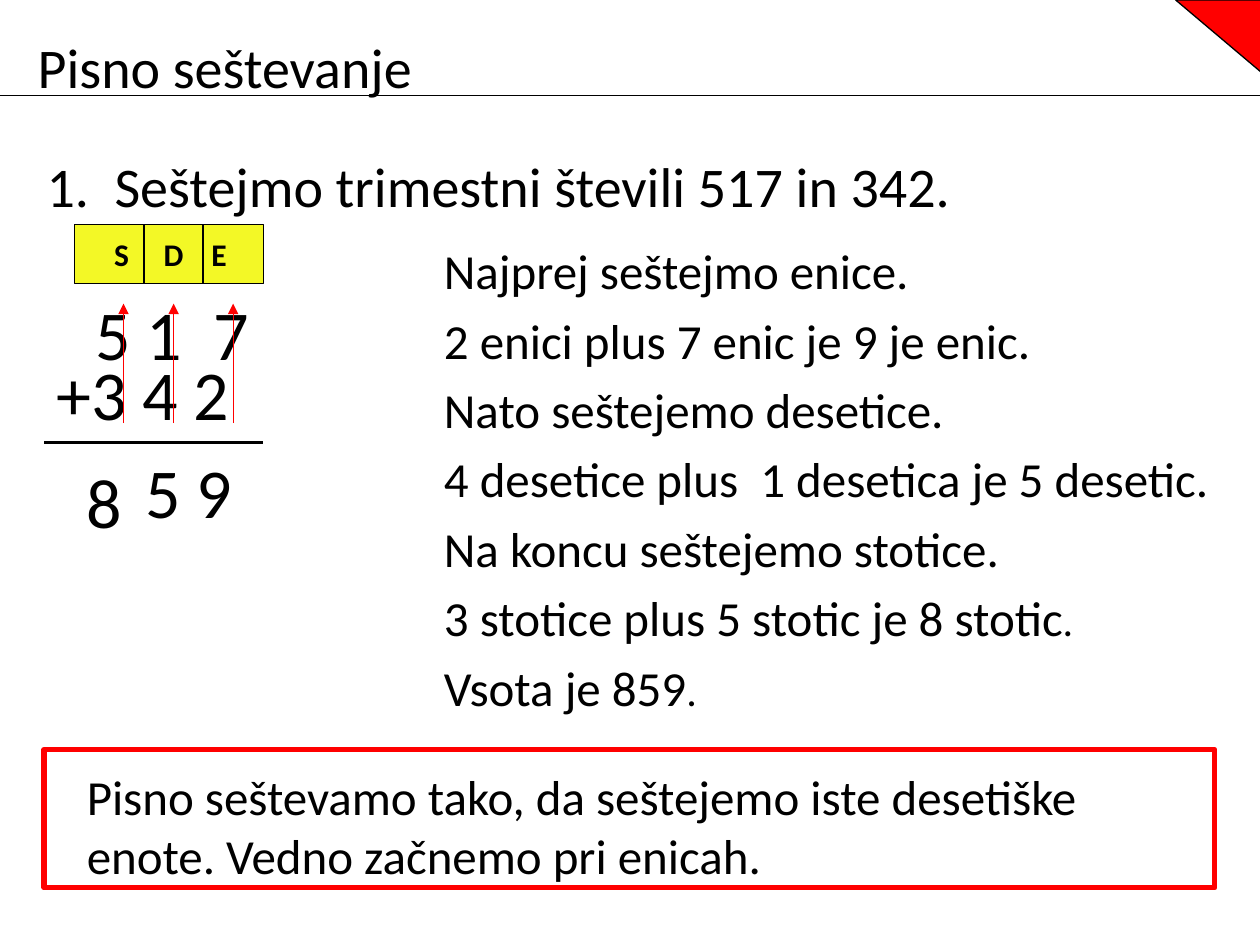
from dataclasses import dataclass

from lxml.etree import SubElement
from pptx import Presentation
from pptx.dml.color import RGBColor
from pptx.enum.shapes import MSO_CONNECTOR as Connector, MSO_SHAPE as Preset
from pptx.enum.text import MSO_ANCHOR as Anchor, PP_ALIGN as Align
from pptx.oxml.ns import qn
from pptx.util import Cm, Pt


@dataclass(frozen=True)
class Theme:
    font: str = "Calibri"
    black: str = "000000"
    red: str = "FF0000"
    yellow: str = "F3F826"
    heading: int = 32
    body: int = 28
    full_stop: int = 24
    digit: int = 40
    label: int = 18
    thin: float = 0.75
    medium: float = 2.25
    thick: float = 3


class SlideBuilder:
    def __init__(self, slide, theme):
        self.slide = slide
        self.theme = theme

    def fill_text(self, shape, runs, inset=0.25, tabs=(), bold=False, wrap=True,
                  anchor=Anchor.TOP):
        """Fill a shape with one paragraph of (text, size) runs."""
        frame = shape.text_frame
        frame_format = {
            "word_wrap": wrap, "vertical_anchor": anchor,
            "margin_left": Cm(inset), "margin_right": Cm(0.25),
            "margin_top": Cm(0.13), "margin_bottom": Cm(0.13),
        }
        for name, value in frame_format.items():
            setattr(frame, name, value)

        paragraph = frame.paragraphs[0]
        paragraph.alignment = Align.LEFT
        if tabs:
            properties = paragraph._p.get_or_add_pPr()
            tab_list = SubElement(properties, qn("a:tabLst"))
            for position in tabs:
                SubElement(tab_list, qn("a:tab"), pos=str(int(Cm(position))), algn="l")

        for text, size in runs:
            run = paragraph.add_run()
            run.text = text
            font_format = {"name": self.theme.font, "size": Pt(size), "bold": bold}
            for name, value in font_format.items():
                setattr(run.font, name, value)
            run.font.color.rgb = RGBColor.from_string(self.theme.black)

    def text(self, left, top, width, height, *runs, **style):
        box = self.slide.shapes.add_textbox(Cm(left), Cm(top), Cm(width), Cm(height))
        self.fill_text(box, runs, **style)

    def shape(self, preset, left, top, width, height, line, weight, fill=None, rotation=0):
        shape = self.slide.shapes.add_shape(
            preset, Cm(left), Cm(top), Cm(width), Cm(height))
        shape.shadow.inherit = False
        shape.rotation = rotation
        if fill:
            shape.fill.solid()
            shape.fill.fore_color.rgb = RGBColor.from_string(fill)
        else:
            shape.fill.background()
        shape.line.color.rgb = RGBColor.from_string(line)
        shape.line.width = Pt(weight)
        return shape

    def line(self, x1, y1, x2, y2, color, weight, arrow=False):
        connector = self.slide.shapes.add_connector(
            Connector.STRAIGHT, Cm(x1), Cm(y1), Cm(x2), Cm(y2))
        connector.line.color.rgb = RGBColor.from_string(color)
        connector.line.width = Pt(weight)
        properties = connector._element.spPr
        if arrow:
            SubElement(properties.find(qn("a:ln")), qn("a:tailEnd"), type="triangle")
        SubElement(properties, qn("a:effectLst"))


def main():
    theme = Theme()
    presentation = Presentation()
    presentation.slide_width, presentation.slide_height = Cm(25.4), Cm(19.05)
    slide = presentation.slides.add_slide(presentation.slide_layouts[6])
    builder = SlideBuilder(slide, theme)

    # Title and task
    builder.text(0.51, 0.53, 17.78, 2, ("Pisno seštevanje", theme.heading))
    builder.text(0.69, 2.92, 24.2, 1.4,
                 ("1.\tSeštejmo trimestni števili 517 in 342.", theme.heading),
                 tabs=[1.37])

    # Written addition
    builder.text(1.09, 5.72, 5.59, 1.8, ("5 1\t7", theme.digit), inset=0.83, tabs=[2.38])
    builder.text(0.89, 6.93, 4.8, 1.4, ("+3 4 2", theme.digit))
    builder.line(0.89, 8.92, 5.31, 8.92, theme.black, theme.medium)
    for digit, left, top in [("5", 2.69, 8.92), ("9", 3.71, 8.92), ("8", 1.5, 9.12)]:
        builder.text(left, top, 1.6, 1.9, (digit, theme.digit))
    for x in (4.7, 3.5, 2.49):
        builder.line(x, 8.53, x, 6.12, theme.red, theme.thin, arrow=True)

    # Explanation, one step a row
    stop = (".", theme.full_stop)
    steps = [
        [("Najprej seštejmo enice.", theme.body)],
        [("2 enici plus 7 enic je 9 je enic.", theme.body)],
        [("Nato seštejemo desetice.", theme.body)],
        [("4 desetice plus  1 desetica je 5 desetic.", theme.body)],
        [("Na koncu seštejemo stotice.", theme.body)],
        [("3 stotice plus 5 stotic je 8 stotic", theme.body), stop],
        [("Vsota je 859", theme.body), stop],
    ]
    for row, runs in enumerate(steps):
        builder.text(8.7, 4.72 + 1.4 * row, 16.7, 1.4, *runs)

    # Corner and line under the title
    builder.shape(Preset.RIGHT_TRIANGLE, 23.7, 0, 1.8, 1.52, theme.black, theme.thin,
                  fill=theme.red, rotation=180)
    builder.line(0, 1.93, 25.4, 1.93, theme.black, theme.thin)

    # Framed rule
    builder.text(1.5, 15.32, 22.81, 2.62,
                 ("Pisno seštevamo tako, da seštejemo iste desetiške enote. "
                  "Vedno začnemo pri enicah.", theme.body))
    builder.shape(Preset.RECTANGLE, 0.89, 15.11, 23.6, 2.79, theme.red, theme.thick)

    # Place-value header
    header = builder.shape(Preset.RECTANGLE, 1.5, 4.52, 3.81, 1.19, theme.black,
                           theme.thin, fill=theme.yellow)
    builder.fill_text(header, [("S\tD\tE", theme.label)], inset=0.8, tabs=[1, 1.96],
                      bold=True, anchor=Anchor.MIDDLE)
    for x in (2.9, 4.09):
        builder.line(x, 4.52, x, 5.71, theme.black, theme.thin)

    presentation.save("out.pptx")


if __name__ == "__main__":
    main()
